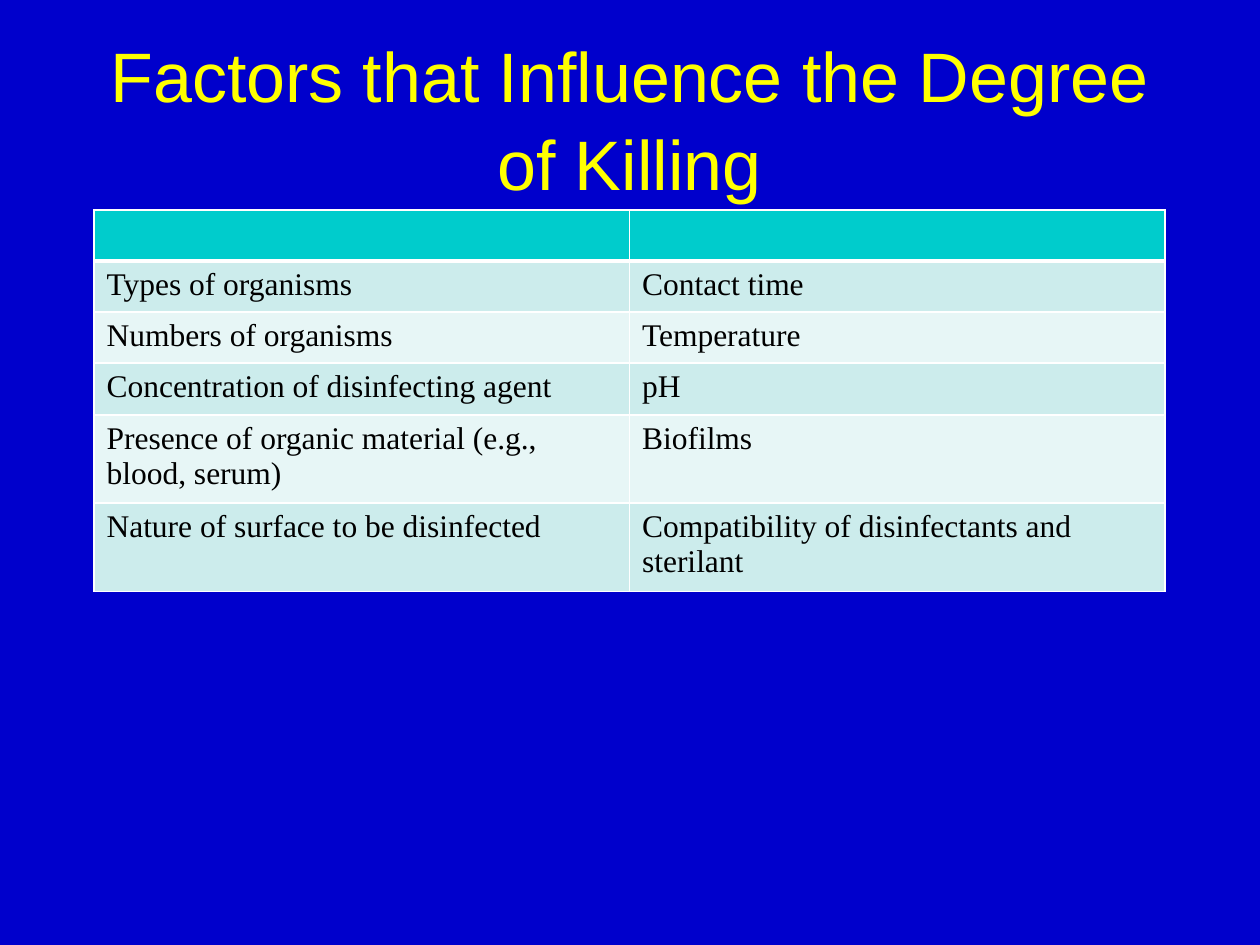
from lxml import etree
from pptx import Presentation, util as u
from pptx.dml.color import RGBColor
from pptx.enum import text
from pptx.oxml.ns import qn

TITLE = "Factors that Influence the Degree of Killing"
ROWS = [
    ("", ""),
    ("Types of organisms", "Contact time"),
    ("Numbers of organisms", "Temperature"),
    ("Concentration of disinfecting agent", "pH"),
    ("Presence of organic material (e.g., blood, serum)", "Biofilms"),
    ("Nature of surface to be disinfected",
     "Compatibility of disinfectants and sterilant"),
]
HEIGHTS = [51, 51, 51, 52, 88, 83]
HEAD, BANDS = "00CCCC", ("E7F6F6", "CCECEC")
LEFT, WIDTH = 94, 1071


def px(n):
    return u.Emu(round(n * 914400 / 126))


def rgb(code):
    return RGBColor.from_string(code)


def style(font, name, size, color):
    font.name, font.size = name, u.Pt(size)
    font.color.rgb = rgb(color)


def border(cell, side, width):
    # Borders must come before the fill in the cell properties
    line = etree.Element(qn("a:" + side), w=str(u.Pt(width)))
    fill = etree.SubElement(line, qn("a:solidFill"))
    etree.SubElement(fill, qn("a:srgbClr"), val="FFFFFF")
    props = cell._tc.get_or_add_tcPr()
    props.insert(len(props.findall("*")) - 1, line)


prs = Presentation()
prs.slide_width, prs.slide_height = px(1260), px(945)
slide = prs.slides.add_slide(prs.slide_layouts[6])
slide.background.fill.solid()
slide.background.fill.fore_color.rgb = rgb("0000CC")

# Title
box = slide.shapes.add_textbox(px(LEFT), px(32), px(WIDTH), px(168))
frame = box.text_frame
frame.word_wrap = True
frame.vertical_anchor = text.MSO_ANCHOR.MIDDLE
frame.text = TITLE
para = frame.paragraphs[0]
para.alignment = text.PP_ALIGN.CENTER
para.line_spacing = 1.05
style(para.runs[0].font, "Arial", 40, "FFFF00")

# Table of factors
table = slide.shapes.add_table(len(ROWS), 2, px(LEFT), px(210),
                               px(WIDTH), px(sum(HEIGHTS))).table
for r, (words, height) in enumerate(zip(ROWS, HEIGHTS)):
    table.rows[r].height = px(height)
    for c, word in enumerate(words):
        cell = table.cell(r, c)
        cell.text = word
        style(cell.text_frame.paragraphs[0].font, "Times New Roman", 18, "000000")
        for run in cell.text_frame.paragraphs[0].runs:
            style(run.font, "Times New Roman", 18, "000000")
        cell.fill.solid()
        cell.fill.fore_color.rgb = rgb(BANDS[r % 2] if r else HEAD)
        for side in ("lnL", "lnR", "lnT", "lnB"):
            thick = (r, side) in ((0, "lnB"), (1, "lnT"))
            border(cell, side, 3 if thick else 1)

prs.save("out.pptx")
